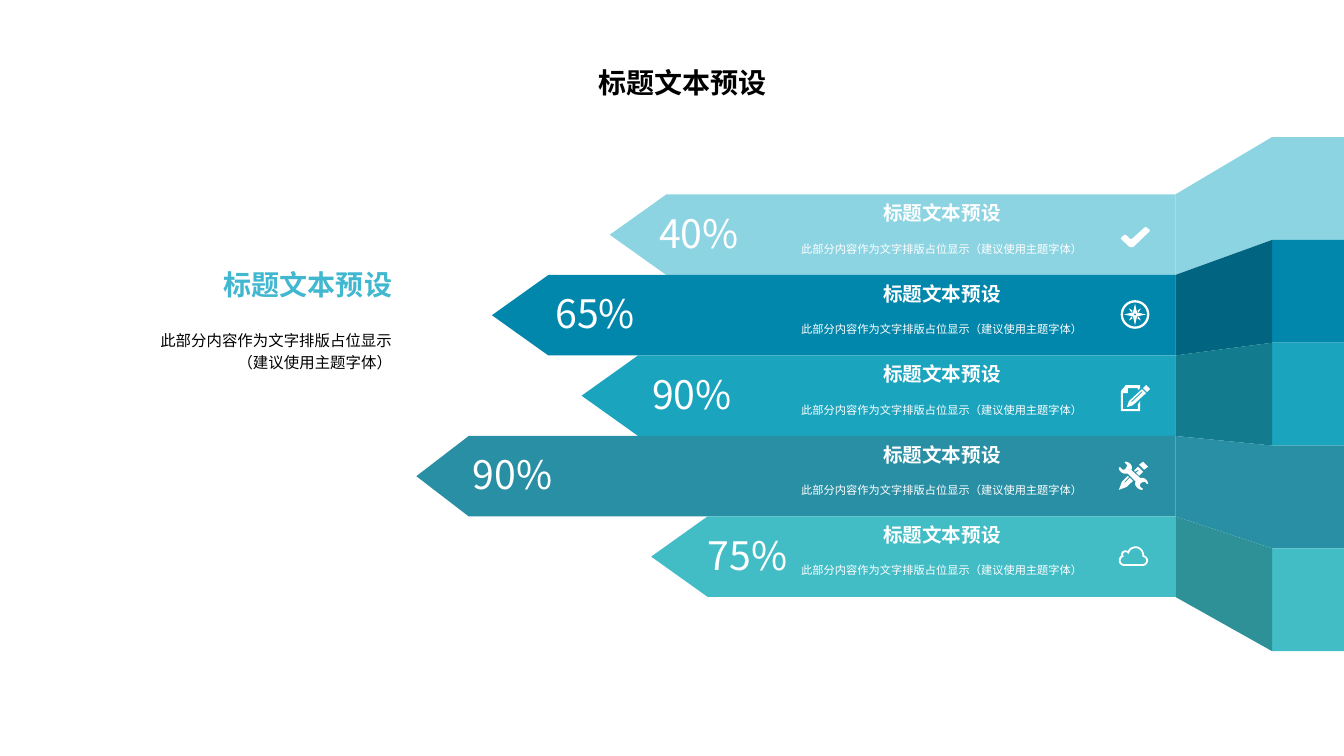
import math
from dataclasses import dataclass
from itertools import product
from typing import NamedTuple

from lxml import etree
from pptx import Presentation
from pptx import util as u
from pptx.dml import color
from pptx.enum import shapes, text
from pptx.oxml import ns
from pptx.slide import Slide

COLUMNS, ROWS = 160, 90
WIDTH, HEIGHT = u.Inches(13.33), u.Inches(7.5)
ICON_STEP = 0.12
BAND_TOP, BAND_ROWS, BAND_RIGHT = 23.16, 9.58, 139.92
WALL_TOP, WALL_ROWS, WALL_LEFT = 16.32, 12.24, 151.44

Contour = list[tuple[float, ...]]
Icon = list[list[Contour]]


@dataclass(frozen=True)
class Theme:
    font: str = "Noto Sans CJK SC"
    white: str = "FFFFFF"
    black: str = "000000"
    accent: str = "41B7D0"
    title: float = 20
    body: float = 11
    percent: float = 28
    heading: float = 14
    caption: float = 8
    leading: float = 1.2


class Box(NamedTuple):
    column: float
    row: float
    columns: float
    rows: float


class Insets(NamedTuple):
    left: float = 0
    top: float = 0
    right: float = 1.92
    bottom: float = 0


@dataclass(frozen=True)
class Style:
    size: float
    color: str
    bold: bool = False
    align: text.PP_ALIGN = text.PP_ALIGN.CENTER
    anchor: text.MSO_ANCHOR = text.MSO_ANCHOR.TOP
    wrap: bool = False
    leading: float | None = None
    insets: Insets = Insets()


@dataclass(frozen=True)
class Band:
    percent: str
    percent_column: float
    tip: float
    shoulder: float
    front: str
    side: str
    icon: Icon
    icon_column: float
    icon_row: float


THEME = Theme()
HEADING = "标题文本预设"
CAPTION = ["此部分内容作为文字排版占位显示", "（建议使用主题字体）"]


def circle(x: float, y: float, radius: float) -> Contour:
    angles = [math.tau * step / 48 for step in range(48)]
    return [(x + radius * math.cos(a), y + radius * math.sin(a)) for a in angles]


CHECK: Icon = [[[(0, 11), (3.5, 8), (5, 8), (9, 12), (11, 12), (24, 0.3), (25, 0.3), (28.5, 3),
                 (28.5, 4.5), (13, 19.5), (11.5, 20.3), (9.5, 20.3), (8, 19.5), (0, 12)]]]

NEEDLES: Icon = [[[(14 + x * 3.6, 14 + y * 2), (14 + x * 6, 14 + y * 6),
                   (14 + x * 2.6, 14 + y * 4), (14 + x * 2.6, 14 + y * 3)]]
                 for x, y in product((-1, 1), repeat=2)]

COMPASS: Icon = [
    [circle(14, 14, 14.2), circle(14, 14, 11.9)],
    [[(16, 12), (14, 3.3), (12, 12), (3.3, 14), (12, 16), (14, 24.7), (16, 16), (24.7, 14)],
     circle(14, 14, 1)],
    *NEEDLES,
]

NOTE: Icon = [
    [[(17, 24), (2, 24), (2, 8), (7, 8), (7, 3), (17, 3), (17, 5), (19, 3), (19, 0), (5, 0),
      (0, 6), (0, 26), (19, 26), (19, 16), (17, 19)]],
    [[(8, 16), (6, 22), (12, 20), (25, 8), (21, 4)],
     [(21, 6), (21.7, 6.7), (11, 17), (10.2, 16.2)]],
    [[(22, 3), (25, 0), (29, 4), (26, 7)]],
]

TOOLS: Icon = [
    [[(11, 16), (6, 21), (5.3, 20.3), (10, 15.5), (9, 14), (3, 20), (0, 28), (8, 25), (14, 19)]],
    [[(16, 10), (19, 8), (19.7, 8.7), (17, 11), (20, 14), (24, 10), (19, 5), (15, 9)]],
    [[(20, 3), (24, 0), (29, 5), (25, 8)]],
    [[(23, 16), (22, 16, 21, 16, 21, 16), (12, 8), (13, 8, 13, 7, 13, 6), (13, 3, 10, 0, 6, 0),
      (6, 1), (8, 3, 8, 3, 8, 4), (8, 6, 6, 8, 5, 8), (4, 8, 3, 8, 1, 5),
      (1, 6, 0, 6, 0, 6), (0, 9, 3, 12, 7, 12), (7, 12, 8, 12, 9, 12), (17, 20),
      (17, 20, 16, 21, 16, 21), (16, 25, 20, 28, 23, 28), (24, 27), (21, 25, 21, 25, 21, 23),
      (21, 22, 23, 20, 25, 20), (26, 20, 26, 20, 28, 22), (29, 22), (29, 19, 26, 16, 23, 16)]],
]

CLOUD: Icon = [[
    [(25.2, 9), (25, 4, 21, 0, 17, 0), (13, 0, 10, 2, 8.8, 5), (8, 4.3, 7.5, 4, 6.7, 4),
     (4, 4, 2.3, 6, 2.3, 8), (2.5, 9.2), (1, 10, 0, 12, 0, 14), (0, 17, 2.4, 19.5, 5.5, 19.5),
     (23.3, 19.5), (26.5, 19.5, 29, 17, 29, 14), (29, 12, 27.5, 10, 25.2, 9)],
    [(23, 17.7), (5.5, 17.7), (3.4, 17.7, 1.8, 16, 1.8, 14), (1.8, 12.5, 2.8, 11, 4, 10.6),
     (4.8, 10.2), (4.6, 9.2), (4.2, 8.3, 4, 8, 4.1, 7.8), (4.2, 6.8, 5.2, 5.8, 6.7, 5.8),
     (7.3, 5.8, 7.8, 6, 8.2, 6.3), (9.6, 7.6), (10.5, 5.7), (11.5, 3.3, 14, 1.8, 17, 1.8),
     (20.3, 1.8, 23.3, 5, 23.3, 8.6), (23.3, 10.2), (24.4, 10.6),
     (26, 11, 27.2, 12.5, 27.2, 14), (27.2, 16, 25.5, 17.7, 23, 17.7)],
]]

BANDS = [
    Band("40%", 77.28, 72.6, 79.32, "8DD4E3", "8DD4E3", CHECK, 133.44, 27),
    Band("65%", 64.92, 58.56, 65.28, "0187AC", "016581", COMPASS, 133.44, 35.76),
    Band("90%", 76.44, 69.24, 75.96, "1AA4BE", "137B8E", NOTE, 133.44, 45.84),
    Band("90%", 55.08, 49.56, 55.8, "298FA4", "298FA4", TOOLS, 133.2, 54.96),
    Band("75%", 83.04, 77.52, 84.24, "42BDC6", "2E9198", CLOUD, 133.2, 65.04),
]


def across(columns: float) -> int:
    return round(WIDTH * columns / COLUMNS)


def down(rows: float) -> int:
    return round(HEIGHT * rows / ROWS)


def flatten(contour: Contour) -> Contour:
    points: Contour = []
    for node in contour:
        if len(node) == 2:
            points.append(node)
            continue
        controls = [points[-1], node[:2], node[2:4], node[4:]]
        for t in (step / 8 for step in range(1, 9)):
            weights = [math.comb(3, i) * t**i * (1 - t) ** (3 - i) for i in range(4)]
            points.append(tuple(sum(w * c[axis] for w, c in zip(weights, controls))
                                for axis in (0, 1)))
    return points


def paint(shape, fill: str) -> None:
    shape.shadow.inherit = False
    shape.fill.solid()
    shape.fill.fore_color.rgb = color.RGBColor.from_string(fill)
    shape.line.fill.background()


def draw_outline(slide: Slide, contours: list[Contour], fill: str) -> None:
    outlines = [[(across(x), down(y)) for x, y in contour] for contour in contours]
    builder = slide.shapes.build_freeform(*outlines[0][0], scale=1.0)
    for index, outline in enumerate(outlines):
        if index:
            builder.move_to(*outline[0])
        builder.add_line_segments(outline[1:], close=True)
    paint(builder.convert_to_shape(), fill)


def draw_icon(slide: Slide, icon: Icon, column: float, row: float) -> None:
    for part in icon:
        draw_outline(slide, [[(column + x * ICON_STEP, row + y * ICON_STEP)
                              for x, y in flatten(contour)] for contour in part], THEME.white)


def draw_text(slide: Slide, box: Box, lines: list[str], style: Style) -> None:
    frame = slide.shapes.add_textbox(across(box.column), down(box.row),
                                     across(box.columns), down(box.rows)).text_frame
    frame.word_wrap = style.wrap
    frame.vertical_anchor = style.anchor
    frame.margin_left, frame.margin_right = across(style.insets.left), across(style.insets.right)
    frame.margin_top, frame.margin_bottom = down(style.insets.top), down(style.insets.bottom)
    paragraph = frame.paragraphs[0]
    paragraph.alignment = style.align
    paragraph.line_spacing = style.leading
    for index, line in enumerate(lines):
        if index:
            paragraph.add_line_break()
        run = paragraph.add_run()
        run.text = line
        run.font.size, run.font.bold, run.font.name = u.Pt(style.size), style.bold, THEME.font
        run.font.color.rgb = color.RGBColor.from_string(style.color)
        etree.SubElement(run.font._element, ns.qn("a:ea"), typeface=THEME.font)


def draw_band(slide: Slide, band: Band, index: int) -> None:
    top, wall = BAND_TOP + index * BAND_ROWS, WALL_TOP + index * WALL_ROWS
    bottom, wall_bottom = top + BAND_ROWS, wall + WALL_ROWS
    draw_outline(slide, [[(BAND_RIGHT, bottom), (BAND_RIGHT, top), (band.shoulder, top),
                          (band.tip, (top + bottom) / 2), (band.shoulder, bottom)]], band.front)
    paint(slide.shapes.add_shape(shapes.MSO_SHAPE.RECTANGLE, across(WALL_LEFT), down(wall),
                                 across(COLUMNS - WALL_LEFT), down(WALL_ROWS)), band.front)
    draw_outline(slide, [[(WALL_LEFT, wall_bottom), (WALL_LEFT, wall),
                          (BAND_RIGHT, top), (BAND_RIGHT, bottom)]], band.side)
    middle = text.MSO_ANCHOR.MIDDLE
    draw_text(slide, Box(band.percent_column, top + 1.13, 14.28, 6.84), [band.percent],
              Style(THEME.percent, THEME.white, align=text.PP_ALIGN.LEFT, anchor=middle,
                    insets=Insets(1.2, 0.6, 3.6, 0.6)))
    draw_icon(slide, band.icon, band.icon_column, band.icon_row)
    draw_text(slide, Box(93.24, top + 0.8, 39.72, 3.24), [HEADING],
              Style(THEME.heading, THEME.white, bold=True))
    draw_text(slide, Box(93.24, top + 4, 39.72, 4.56), ["".join(CAPTION)],
              Style(THEME.caption, THEME.white, anchor=middle, wrap=True, leading=THEME.leading))


def main() -> None:
    presentation = Presentation()
    presentation.slide_width, presentation.slide_height = WIDTH, HEIGHT
    slide = presentation.slides.add_slide(presentation.slide_layouts[6])
    right = text.PP_ALIGN.RIGHT
    draw_text(slide, Box(10.32, 31.8, 38.28, 7.08), [HEADING],
              Style(THEME.title, THEME.accent, bold=True, align=right))
    draw_text(slide, Box(10.32, 39, 38.28, 9.96), CAPTION,
              Style(THEME.body, THEME.black, align=right, wrap=True, leading=THEME.leading))
    for index, band in enumerate(BANDS):
        draw_band(slide, band, index)
    draw_text(slide, Box(44.16, 6.36, 74.16, 6.96), [HEADING],
              Style(THEME.title, THEME.black, bold=True, anchor=text.MSO_ANCHOR.MIDDLE,
                    insets=Insets(1.2, 0.6, 1.2, 0.6)))
    presentation.save("out.pptx")


if __name__ == "__main__":
    main()
